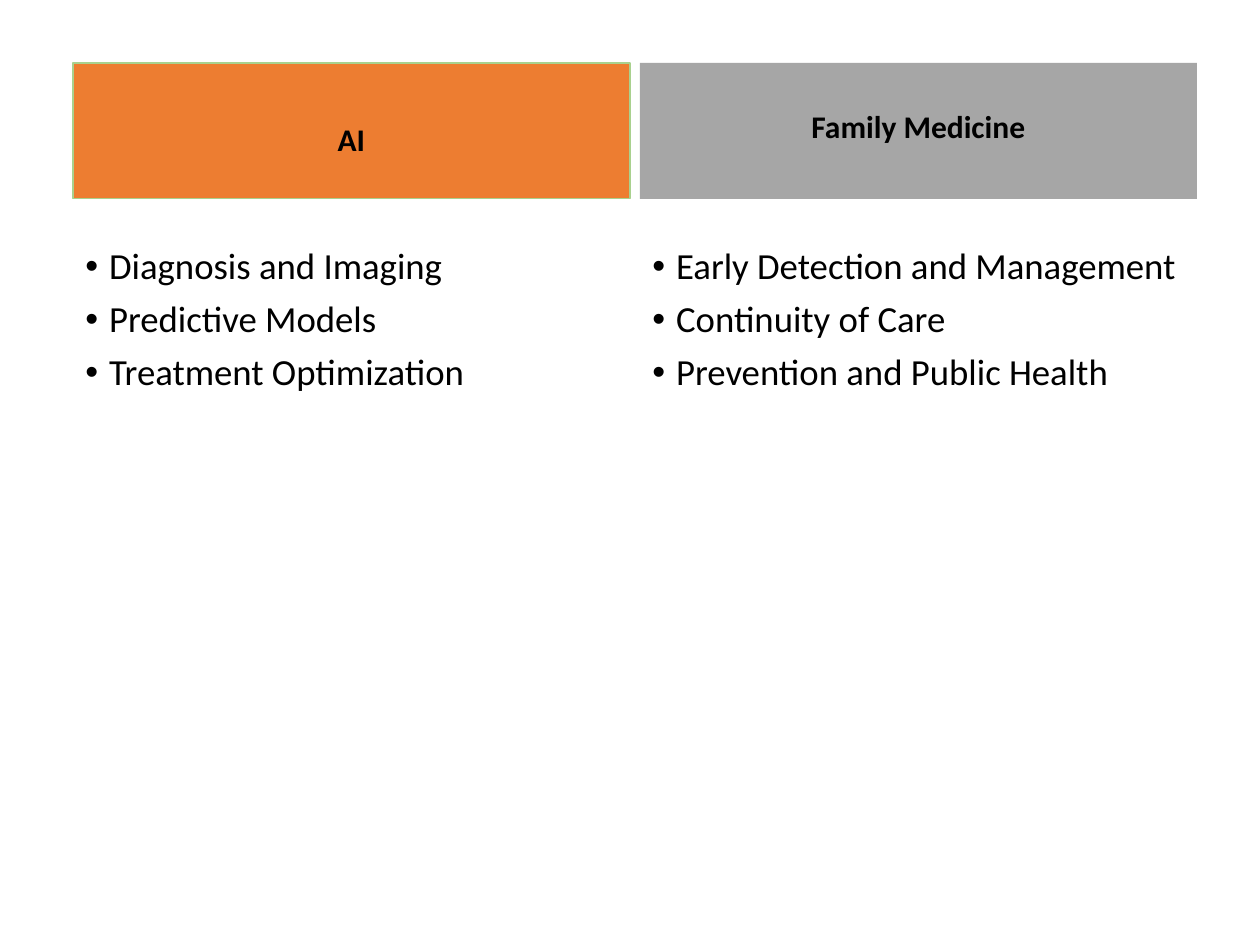
import pptx
import pptx.util
import pptx.dml.color
import pptx.enum.shapes
import pptx.enum.text
import lxml.etree
from pptx.util import Cm


def color(value):
    return pptx.dml.color.RGBColor.from_string(value)


def add_paragraph(tf, i, text, size):
    p = tf.paragraphs[0] if i == 0 else tf.add_paragraph()
    p.text = text
    p.line_spacing = 0.9
    p.space_before = pptx.util.Pt(7.5)
    p.font.name = "Calibri"
    p.font.size = pptx.util.Pt(size)
    p.font.color.rgb = color("000000")
    return p


prs = pptx.Presentation()
prs.slide_width = Cm(25.4)
prs.slide_height = Cm(19.05)
s = prs.slides.add_slide(prs.slide_layouts[6])

columns = [
    ("AI", "ED7D31", "A9D18E", 0.82, 4.45,
     ["Diagnosis and Imaging", "Predictive Models", "Treatment Optimization"]),
    ("Family Medicine", "A6A6A6", None, 1.09, 12.14,
     ["Early Detection and Management", "Continuity of Care", "Prevention and Public Health"]),
]
left, width, step = 1.47, 11.23, 11.43

for i, (heading, fill, line, inset, height, items) in enumerate(columns):
    x = Cm(left + i * step)

    sp = s.shapes.add_shape(pptx.enum.shapes.MSO_SHAPE.RECTANGLE, x, Cm(1.27), Cm(width), Cm(2.74))
    sp.shadow.inherit = False
    sp.fill.solid()
    sp.fill.fore_color.rgb = color(fill)
    if line:
        sp.line.color.rgb = color(line)
        sp.line.width = pptx.util.Pt(0.75)
    else:
        sp.line.fill.background()
    tf = sp.text_frame
    tf.word_wrap = True
    tf.vertical_anchor = pptx.enum.text.MSO_ANCHOR.BOTTOM
    tf.margin_bottom = Cm(inset)
    p = add_paragraph(tf, 0, heading, 18)
    p.alignment = pptx.enum.text.PP_ALIGN.CENTER
    p.font.bold = True

    sp = s.shapes.add_textbox(x, Cm(4.88), Cm(width), Cm(height))
    tf = sp.text_frame
    tf.word_wrap = True
    for j, item in enumerate(items):
        p = add_paragraph(tf, j, item, 21)
        pPr = p._p.get_or_add_pPr()
        pPr.set("marL", str(Cm(0.48)))
        pPr.set("indent", str(-Cm(0.48)))
        font = lxml.etree.Element(pptx.oxml.ns.qn("a:buFont"), typeface="Arial")
        bullet = lxml.etree.Element(pptx.oxml.ns.qn("a:buChar"), char="•")
        pPr.find(pptx.oxml.ns.qn("a:defRPr")).addprevious(font)
        font.addnext(bullet)

prs.save("out.pptx")
